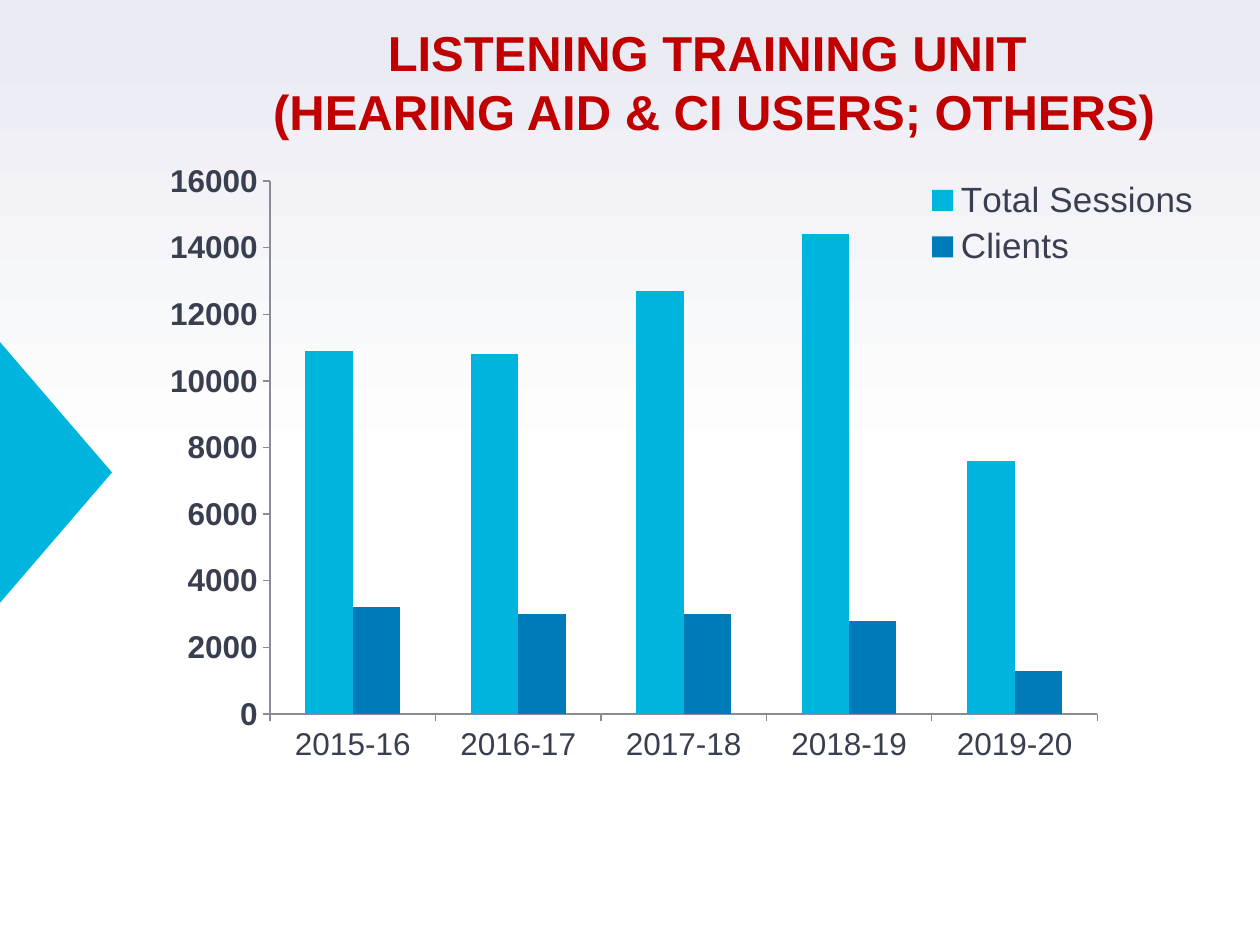
from dataclasses import dataclass

from lxml import etree
from pptx import Presentation
from pptx.chart.data import CategoryChartData
from pptx.dml.color import RGBColor
from pptx.enum.chart import XL_CHART_TYPE, XL_LEGEND_POSITION, XL_TICK_MARK
from pptx.enum.shapes import MSO_SHAPE
from pptx.enum.text import MSO_ANCHOR, MSO_AUTO_SIZE, PP_ALIGN
from pptx.oxml.ns import qn
from pptx.util import Pt

COLUMNS = XL_CHART_TYPE.COLUMN_CLUSTERED
LEGEND_RIGHT = XL_LEGEND_POSITION.RIGHT
TICK_OUT = XL_TICK_MARK.OUTSIDE
TICK_NONE = XL_TICK_MARK.NONE
TRIANGLE = MSO_SHAPE.ISOSCELES_TRIANGLE
TITLE_ONLY = 5


@dataclass(frozen=True)
class Theme:
    font: str = "Arial"
    title: RGBColor = RGBColor(0xC0, 0x00, 0x00)
    text: RGBColor = RGBColor(0x3A, 0x3F, 0x50)
    axis: RGBColor = RGBColor(0x89, 0x8C, 0x96)
    accent: RGBColor = RGBColor(0x00, 0xB5, 0xDD)
    white: RGBColor = RGBColor(0xFF, 0xFF, 0xFF)
    haze: RGBColor = RGBColor(0xE9, 0xEA, 0xF2)
    title_size: int = 28
    legend_size: int = 20
    axis_size: int = 18


@dataclass(frozen=True)
class Box:
    left: float
    top: float
    width: float
    height: float

    def place(self) -> tuple:
        return Pt(self.left), Pt(self.top), Pt(self.width), Pt(self.height)


@dataclass(frozen=True)
class Series:
    name: str
    values: tuple
    color: RGBColor


THEME = Theme()
TITLE_LINES = ("LISTENING TRAINING UNIT ", "(HEARING AID & CI USERS; OTHERS)")
YEARS = ("2015-16", "2016-17", "2017-18", "2018-19", "2019-20")
SERIES = (
    Series("Total Sessions", (10900, 10800, 12700, 14400, 7600), THEME.accent),
    Series("Clients", (3200, 3000, 3000, 2800, 1300), RGBColor(0x00, 0x7B, 0xB9)),
)
TITLE_BOX = Box(147, 9.4, 522, 75)
CHART_BOX = Box(82, 88.5, 618, 357)
TRIANGLE_BOX = Box(-42.5, 238, 149, 64)
# Shares of the chart's width and height
PLOT_SHARE = Box(0.117, 0.042, 0.765, 0.853)
LEGEND_SHARE = Box(0.71, 0.03, 0.28, 0.16)


def style_font(font, size: int, color: RGBColor, bold: bool = False) -> None:
    font.name = THEME.font
    font.size = Pt(size)
    font.bold = bold
    font.color.rgb = color


def set_layout(parent, share: Box, index: int, inner: bool = False) -> None:
    """Fix the place of a chart part as shares of the chart."""
    layout = parent.find(qn("c:layout"))
    if layout is None:
        layout = etree.Element(qn("c:layout"))
        parent.insert(index, layout)
    manual = etree.SubElement(layout, qn("c:manualLayout"))
    settings = [("layoutTarget", "inner")] if inner else []
    settings += [("xMode", "edge"), ("yMode", "edge"), ("x", share.left),
                 ("y", share.top), ("w", share.width), ("h", share.height)]
    for tag, value in settings:
        etree.SubElement(manual, qn(f"c:{tag}")).set("val", str(value))


def style_axis(axis, bold: bool) -> None:
    axis.has_major_gridlines = False
    axis.major_tick_mark = TICK_OUT
    axis.minor_tick_mark = TICK_NONE
    axis.format.line.color.rgb = THEME.axis
    axis.format.line.width = Pt(0.75)
    style_font(axis.tick_labels.font, THEME.axis_size, THEME.text, bold)


def paint_background(page) -> None:
    fill = page.background.fill
    fill.gradient()
    fill.gradient_angle = 90
    for stop, position, color in zip(fill.gradient_stops, (0.5, 1),
                                     (THEME.white, THEME.haze)):
        stop.position = position
        stop.color.rgb = color


def add_triangle(page) -> None:
    triangle = page.shapes.add_shape(TRIANGLE, *TRIANGLE_BOX.place())
    triangle.rotation = 90
    triangle.shadow.inherit = False
    triangle.fill.solid()
    triangle.fill.fore_color.rgb = THEME.accent
    triangle.line.fill.background()


def add_session_chart(page) -> None:
    data = CategoryChartData()
    data.categories = YEARS
    for series in SERIES:
        data.add_series(series.name, series.values)
    chart = page.shapes.add_chart(COLUMNS, *CHART_BOX.place(), data).chart
    chart.has_title = False
    style_font(chart.font, THEME.axis_size, THEME.text)

    # Columns
    plot = chart.plots[0]
    plot.vary_by_categories = False
    plot.gap_width = 150
    plot.overlap = 0
    for drawn, series in zip(plot.series, SERIES):
        drawn.format.fill.solid()
        drawn.format.fill.fore_color.rgb = series.color
    plot_area = chart.element.find(f".//{qn('c:plotArea')}")
    set_layout(plot_area, PLOT_SHARE, 0, inner=True)

    # Axes
    style_axis(chart.category_axis, bold=False)
    style_axis(chart.value_axis, bold=True)
    chart.value_axis.minimum_scale = 0
    chart.value_axis.maximum_scale = 16000
    chart.value_axis.major_unit = 2000

    # Legend over the upper right of the plot
    chart.has_legend = True
    chart.legend.position = LEGEND_RIGHT
    chart.legend.include_in_layout = True
    style_font(chart.legend.font, THEME.legend_size, THEME.text)
    set_layout(chart.element.find(f".//{qn('c:legend')}"), LEGEND_SHARE, 1)


def write_title(page) -> None:
    title = page.shapes.title
    title.left, title.top, title.width, title.height = TITLE_BOX.place()
    frame = title.text_frame
    frame.text = "\n".join(TITLE_LINES)
    frame.word_wrap = False
    frame.auto_size = MSO_AUTO_SIZE.SHAPE_TO_FIT_TEXT
    frame.vertical_anchor = MSO_ANCHOR.TOP
    for para in frame.paragraphs:
        para.alignment = PP_ALIGN.CENTER
        for span in para.runs:
            style_font(span.font, THEME.title_size, THEME.title, bold=True)


def main() -> None:
    deck = Presentation()
    deck.slide_width, deck.slide_height = Pt(720), Pt(540)
    page = deck.slides.add_slide(deck.slide_layouts[TITLE_ONLY])
    paint_background(page)
    add_triangle(page)
    add_session_chart(page)
    write_title(page)
    deck.save("out.pptx")


if __name__ == "__main__":
    main()
